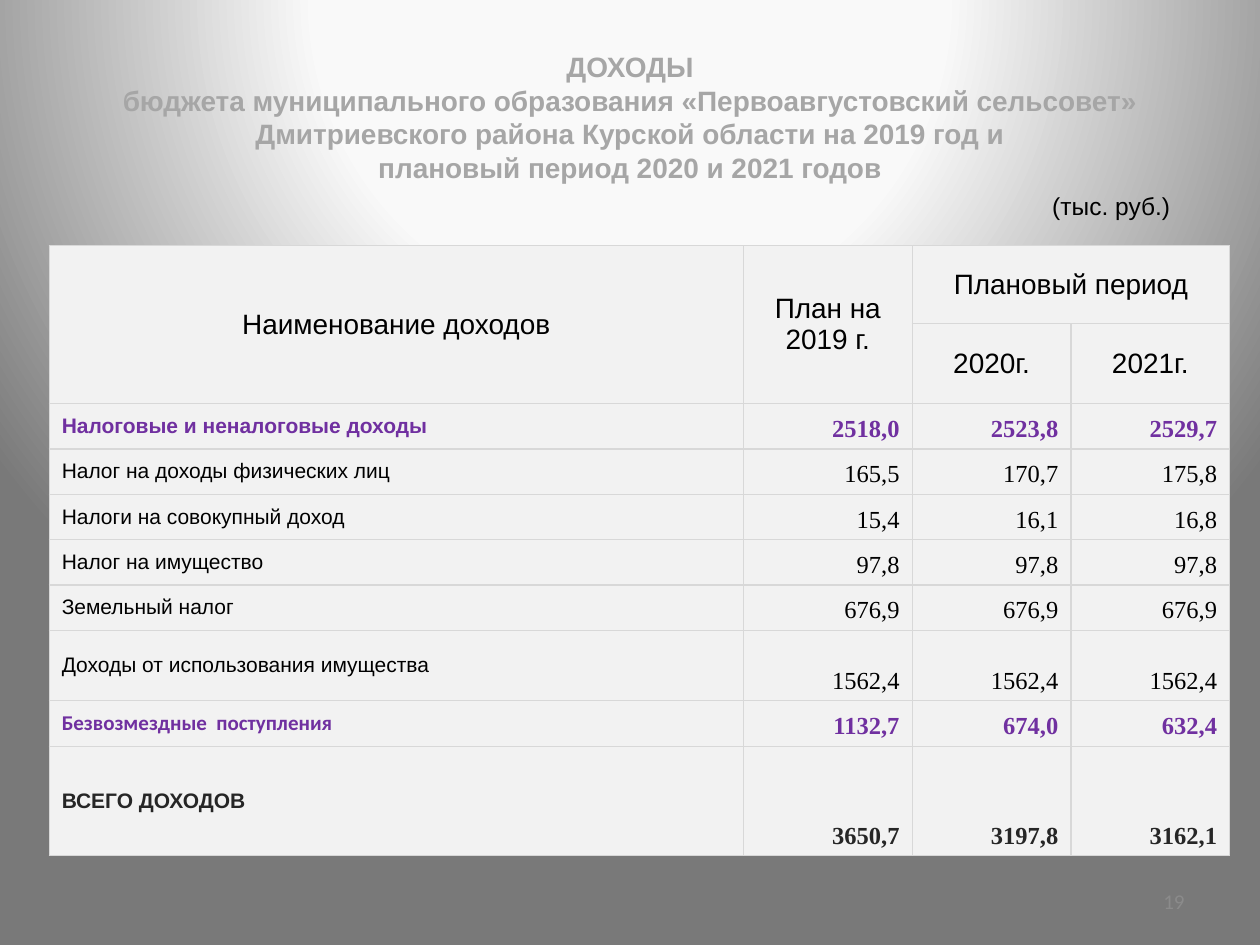
from dataclasses import dataclass

import lxml.etree
import pptx
import pptx.dml.color
import pptx.enum.text
import pptx.oxml
import pptx.oxml.ns
import pptx.util
from pptx.util import Inches

ALIGN = pptx.enum.text.PP_ALIGN
ANCHOR = pptx.enum.text.MSO_ANCHOR
qn = pptx.oxml.ns.qn


@dataclass(frozen=True)
class Theme:
    sans: str = "Arial"
    serif: str = "Times New Roman"
    narrow: str = "Calibri"
    title: str = "A6A6A6"
    text: str = "000000"
    section: str = "7030A0"
    total: str = "262626"
    page: str = "8B8B8B"
    cell: str = "F2F2F2"
    border: str = "D8D8D8"
    background: tuple = ((0, "FBFBFB"), (40, "F9F9F9"), (100, "797979"))
    heading_size: int = 16
    value_size: int = 14
    label_size: int = 12


theme = Theme()


def write(frame, text, size=theme.heading_size, font=theme.sans, color=theme.text,
          bold=False, align=ALIGN.CENTER, anchor=ANCHOR.MIDDLE):
    """Fill the frame's empty first paragraph, or append a paragraph."""
    frame.word_wrap = True
    frame.vertical_anchor = anchor
    paragraph = frame.paragraphs[0] if not frame.text else frame.add_paragraph()
    paragraph.alignment = align
    run = paragraph.add_run()
    run.text = text
    run.font.size = pptx.util.Pt(size)
    run.font.name = font
    run.font.bold = bold
    run.font.color.rgb = pptx.dml.color.RGBColor.from_string(color)
    return paragraph


def style_cell(cell):
    cell.fill.solid()
    cell.fill.fore_color.rgb = pptx.dml.color.RGBColor.from_string(theme.cell)
    properties = cell._tc.get_or_add_tcPr()
    for index, side in enumerate(("lnL", "lnR", "lnT", "lnB")):
        line = lxml.etree.Element(qn(f"a:{side}"), w=str(pptx.util.Pt(0.75)))
        fill = lxml.etree.SubElement(line, qn("a:solidFill"))
        lxml.etree.SubElement(fill, qn("a:srgbClr"), val=theme.border)
        properties.insert(index, line)


presentation = pptx.Presentation()
presentation.slide_width = Inches(10)
presentation.slide_height = Inches(7.5)
slide = presentation.slides.add_slide(presentation.slide_layouts[6])

# Background: circular gradient centred above the slide
slide.background.fill.gradient()
gradient = slide.element.find(".//" + qn("a:gradFill"))
for child in list(gradient):
    gradient.remove(child)
stops = lxml.etree.SubElement(gradient, qn("a:gsLst"))
for position, color in theme.background:
    stop = lxml.etree.SubElement(stops, qn("a:gs"), pos=str(position * 1000))
    lxml.etree.SubElement(stop, qn("a:srgbClr"), val=color)
circle = lxml.etree.SubElement(gradient, qn("a:path"), {"path": "circle"})
lxml.etree.SubElement(circle, qn("a:fillToRect"), l="50000", t="-80000", r="50000", b="180000")

# Title, with the unit set at a right tab
title = slide.shapes.add_textbox(Inches(0.31), Inches(0.33), Inches(9.38), Inches(1.48))
for line in (
    "ДОХОДЫ",
    "бюджета муниципального образования «Первоавгустовский сельсовет» "
    "Дмитриевского района Курской области на 2019 год и",
    "плановый период 2020 и 2021 годов",
):
    write(title.text_frame, line, color=theme.title, bold=True)
unit = write(title.text_frame, "\t(тыс. руб.)", size=theme.value_size, align=ALIGN.LEFT)
unit.space_before = pptx.util.Pt(4)
tabs = lxml.etree.SubElement(unit._p.get_or_add_pPr(), qn("a:tabLst"))
lxml.etree.SubElement(tabs, qn("a:tab"), pos=str(Inches(8.88)), algn="r")

# Table
column_widths = (5.51, 1.34, 1.26, 1.26)
row_heights = (0.62, 0.63, *[0.36] * 5, 0.56, 0.36, 0.87)
table = slide.shapes.add_table(
    len(row_heights), len(column_widths), Inches(0.39), Inches(1.95),
    Inches(sum(column_widths)), Inches(sum(row_heights))).table
table.first_row = False
table.horz_banding = False
for column, width in zip(table.columns, column_widths):
    column.width = Inches(width)
for row, height in zip(table.rows, row_heights):
    row.height = Inches(height)
for cell in table.iter_cells():
    style_cell(cell)

headings = (
    (0, 0, 1, 0, "Наименование доходов"),
    (0, 1, 1, 1, "План на 2019 г."),
    (0, 2, 0, 3, "Плановый период"),
    (1, 2, 1, 2, "2020г."),
    (1, 3, 1, 3, "2021г."),
)
for top, left, bottom, right, text in headings:
    cell = table.cell(top, left)
    if (top, left) != (bottom, right):
        cell.merge(table.cell(bottom, right))
    cell.vertical_anchor = ANCHOR.MIDDLE
    write(cell.text_frame, text)

plain = {}
section = {"color": theme.section, "bold": True}
total = {"color": theme.total, "bold": True}
incomes = (
    ("Налоговые и неналоговые доходы", ("2518,0", "2523,8", "2529,7"), theme.sans, section),
    ("Налог на доходы физических лиц", ("165,5", "170,7", "175,8"), theme.sans, plain),
    ("Налоги на совокупный доход", ("15,4", "16,1", "16,8"), theme.sans, plain),
    ("Налог на имущество", ("97,8", "97,8", "97,8"), theme.sans, plain),
    ("Земельный налог", ("676,9", "676,9", "676,9"), theme.sans, plain),
    ("Доходы от использования имущества", ("1562,4", "1562,4", "1562,4"), theme.sans, plain),
    ("Безвозмездные  поступления", ("1132,7", "674,0", "632,4"), theme.narrow, section),
    ("ВСЕГО ДОХОДОВ", ("3650,7", "3197,8", "3162,1"), theme.sans, total),
)
for row, (label, values, label_font, emphasis) in enumerate(incomes, start=2):
    cell = table.cell(row, 0)
    cell.vertical_anchor = ANCHOR.MIDDLE
    write(cell.text_frame, label, size=theme.label_size, font=label_font,
          align=ALIGN.LEFT, **emphasis)
    for column, value in enumerate(values, start=1):
        cell = table.cell(row, column)
        cell.vertical_anchor = ANCHOR.BOTTOM
        write(cell.text_frame, value, size=theme.value_size, font=theme.serif,
              align=ALIGN.RIGHT, anchor=ANCHOR.BOTTOM, **emphasis)

# Page number
page_number = slide.shapes.add_textbox(Inches(7.17), Inches(6.95), Inches(2.33), Inches(0.4))
write(page_number.text_frame, "19", size=theme.label_size, font=theme.narrow,
      color=theme.page, align=ALIGN.RIGHT)

presentation.save("out.pptx")
